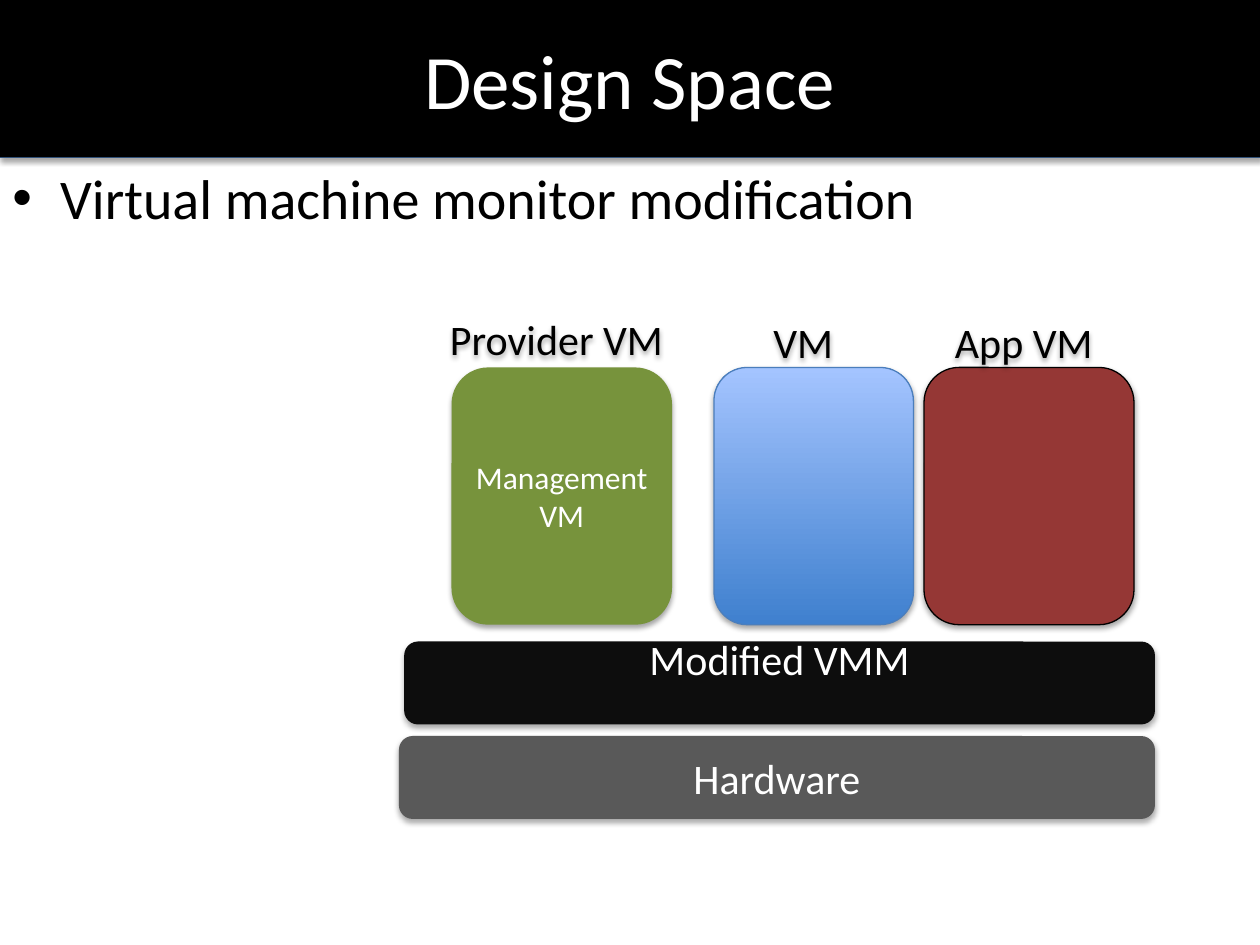
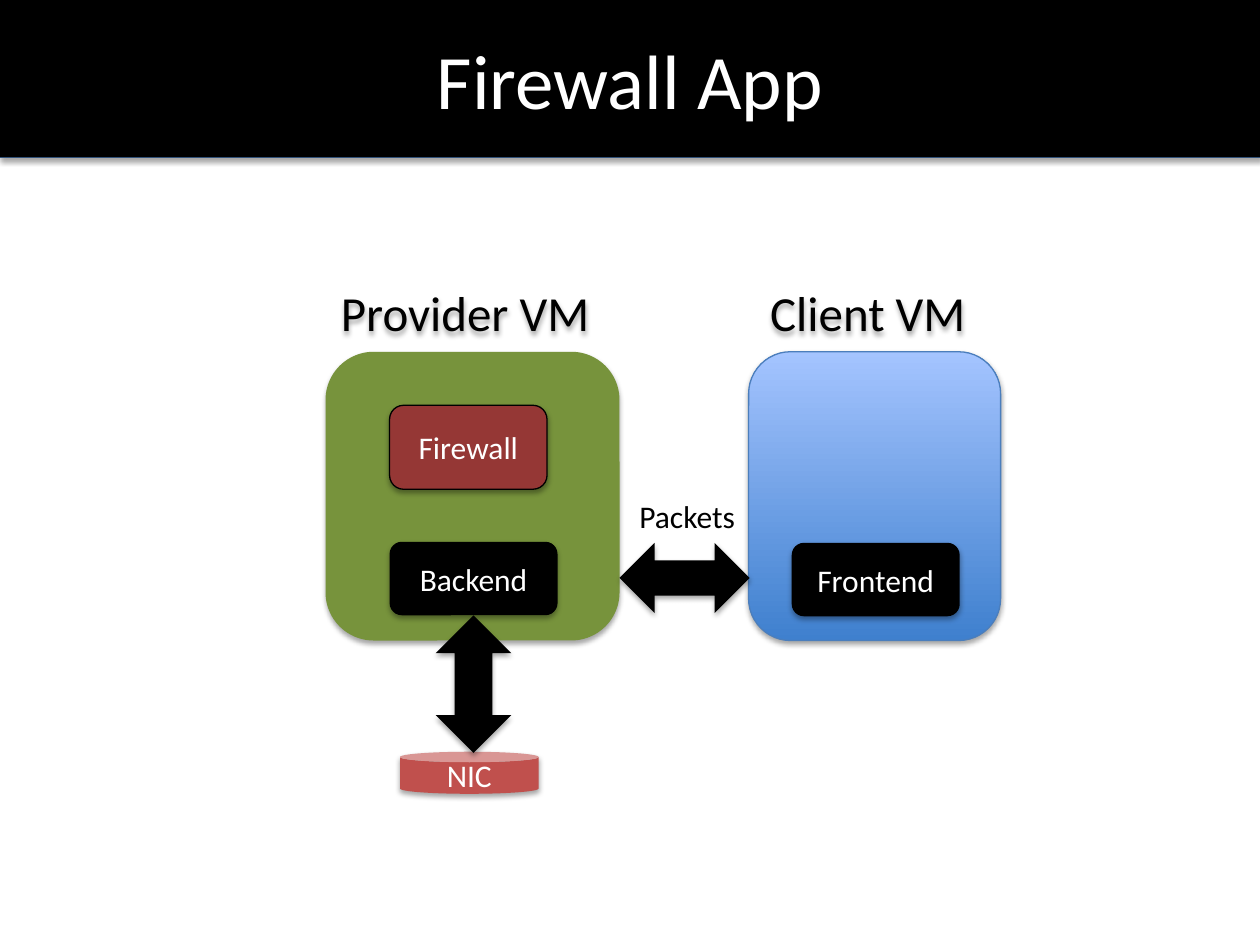
from dataclasses import dataclass

from lxml import etree
from pptx import Presentation
from pptx.dml.color import RGBColor
from pptx.enum.shapes import MSO_SHAPE
from pptx.enum.text import MSO_ANCHOR, PP_ALIGN
from pptx.oxml.ns import qn
from pptx.util import Inches, Pt

RECT, ROUND, CAN = MSO_SHAPE.RECTANGLE, MSO_SHAPE.ROUNDED_RECTANGLE, MSO_SHAPE.CAN
ARROW_H, ARROW_V = MSO_SHAPE.LEFT_RIGHT_ARROW, MSO_SHAPE.UP_DOWN_ARROW
TOP, MIDDLE = MSO_ANCHOR.TOP, MSO_ANCHOR.MIDDLE
LEFT, CENTER = PP_ALIGN.LEFT, PP_ALIGN.CENTER

# The slide is a grid of 120 columns by 90 rows
COLS, ROWS = 120, 90
WIDTH, HEIGHT = Inches(10), Inches(7.5)
BAND = (0, 0, COLS, 15)


@dataclass(frozen=True)
class Theme:
    font: str = "Calibri"
    black: str = "000000"
    white: str = "FFFFFF"
    provider: str = "77933C"
    app: str = "953735"
    monitor: str = "0D0D0D"
    hardware: str = "595959"
    nic: str = "C0504D"
    blue_line: str = "4B7EBC"
    blue: tuple = ("3F80CE", "A4C4FF")
    title: int = 44
    body: int = 32
    heading: int = 28
    label: int = 24
    small: int = 18
    line: float = 0.75


T = Theme()


def rgb(value):
    return RGBColor.from_string(value)


def place(box):
    """Turn (column, row, columns, rows) into slide lengths."""
    x, y, w, h = box
    return [int(n) for n in (x * WIDTH / COLS, y * HEIGHT / ROWS,
                             w * WIDTH / COLS, h * HEIGHT / ROWS)]


def add_shadow(sp):
    sp.shadow.inherit = False
    effects = sp._element.spPr.find(qn("a:effectLst"))
    outer = etree.SubElement(effects, qn("a:outerShdw"), blurRad="39370",
                             dist="22860", dir="5400000", rotWithShape="0")
    color = etree.SubElement(outer, qn("a:srgbClr"), val=T.black)
    etree.SubElement(color, qn("a:alpha"), val="35000")


def write(sp, text, size, color, align=CENTER, anchor=MIDDLE, wrap=True):
    tf = sp.text_frame
    tf.word_wrap, tf.vertical_anchor = wrap, anchor
    p = tf.paragraphs[0]
    p.alignment = align
    r = p.add_run()
    r.text = text
    for name, value in {"name": T.font, "size": Pt(size)}.items():
        setattr(r.font, name, value)
    r.font.color.rgb = rgb(color)
    return p


def add_block(slide, kind, box, fill, text="", size=T.small, line=None, shadow=True):
    """Add a preset shape; a pair of colours as fill runs from bottom to top."""
    sp = slide.shapes.add_shape(kind, *place(box))
    if isinstance(fill, tuple):
        sp.fill.gradient()
        sp.fill.gradient_angle = 90
        for stop, color in zip(sp.fill.gradient_stops, fill):
            stop.color.rgb = rgb(color)
    else:
        sp.fill.solid()
        sp.fill.fore_color.rgb = rgb(fill)
    if line:
        sp.line.color.rgb = rgb(line)
        sp.line.width = Pt(T.line)
    else:
        sp.line.fill.background()
    if shadow:
        add_shadow(sp)
    else:
        sp.shadow.inherit = False
    if text:
        write(sp, text, size, T.white)
    return sp


def add_label(slide, box, text, size):
    sp = slide.shapes.add_textbox(*place(box))
    write(sp, text, size, T.black)
    add_shadow(sp)


def add_bullet(slide, box, text):
    sp = slide.shapes.add_textbox(*place(box))
    p = write(sp, text, T.body, T.black, LEFT, TOP)
    ppr = p._p.get_or_add_pPr()
    indent = Inches(0.38)
    ppr.set("marL", str(indent))
    ppr.set("indent", str(-indent))
    etree.SubElement(ppr, qn("a:buFont"), typeface="Arial")
    etree.SubElement(ppr, qn("a:buChar"), char="•")


def new_slide(prs, title):
    slide = prs.slides.add_slide(prs.slide_layouts[6])
    add_block(slide, RECT, BAND, T.blue, line=T.blue_line)
    add_block(slide, RECT, BAND, T.black, title, T.title, shadow=False)
    return slide


def design_space(prs):
    slide = new_slide(prs, "Design Space")
    add_bullet(slide, (0, 15, COLS, 75), "Virtual machine monitor modification")

    # Platform layers
    monitor = add_block(slide, ROUND, (38.5, 61.1, 71.5, 7.9), T.monitor,
                        "Modified VMM", T.label)
    monitor.text_frame.margin_top = 0
    monitor.text_frame.margin_bottom = Inches(0.38)
    add_block(slide, ROUND, (38, 70.1, 72, 7.9), T.hardware, "Hardware", T.label)

    # Virtual machines
    vm_top, vm_rows = 35, 24.5
    for x, w, fill, line, text in (
            (43, 21, T.provider, None, "Management VM"),
            (68, 19, T.blue, T.blue_line, ""),
            (88, 20, T.app, T.black, "")):
        add_block(slide, ROUND, (x, vm_top, w, vm_rows), fill, text, line=line)
    for box, text in (((41, 29.5, 24, 5.5), "Provider VM"),
                      ((67, 29, 19, 7), "VM"),
                      ((88, 29, 19, 7), "App VM")):
        add_label(slide, box, text, T.label)


def firewall_app(prs):
    slide = new_slide(prs, "Firewall App")

    # Virtual machines with their headings
    vm_top, vm_rows, head_top, head_rows = 33.5, 27.5, 26, 7.5
    for x, w, fill, line, head_x, head_w, text in (
            (31, 28, T.provider, None, 31, 26.6, "Provider VM"),
            (71.3, 24, T.blue, T.blue_line, 71, 23.3, "Client VM")):
        add_block(slide, ROUND, (x, vm_top, w, vm_rows), fill, line=line)
        add_label(slide, (head_x, head_top, head_w, head_rows), text, T.heading)

    # Components
    for kind, box, fill, line, text in (
            (ROUND, (37.1, 38.6, 15, 8), T.app, T.black, "Firewall"),
            (ROUND, (37.1, 51.6, 16, 7), T.black, None, "Backend"),
            (ROUND, (75.4, 51.7, 16, 7), T.black, None, "Frontend"),
            (CAN, (38.1, 71.6, 13.2, 4), T.nic, None, "NIC")):
        add_block(slide, kind, box, fill, text, line=line)

    # Packet flow
    add_block(slide, ARROW_H, (59, 51.7, 12.4, 6.7), T.black)
    add_block(slide, ARROW_V, (41.5, 58.6, 7.2, 13.1), T.black)
    packets = slide.shapes.add_textbox(*place((59.7, 46.7, 11.6, 4.8)))
    write(packets, "Packets", T.small, T.black, LEFT, TOP, wrap=False)


def main():
    prs = Presentation()
    prs.slide_width, prs.slide_height = WIDTH, HEIGHT
    design_space(prs)
    firewall_app(prs)
    prs.save("out.pptx")


if __name__ == "__main__":
    main()
